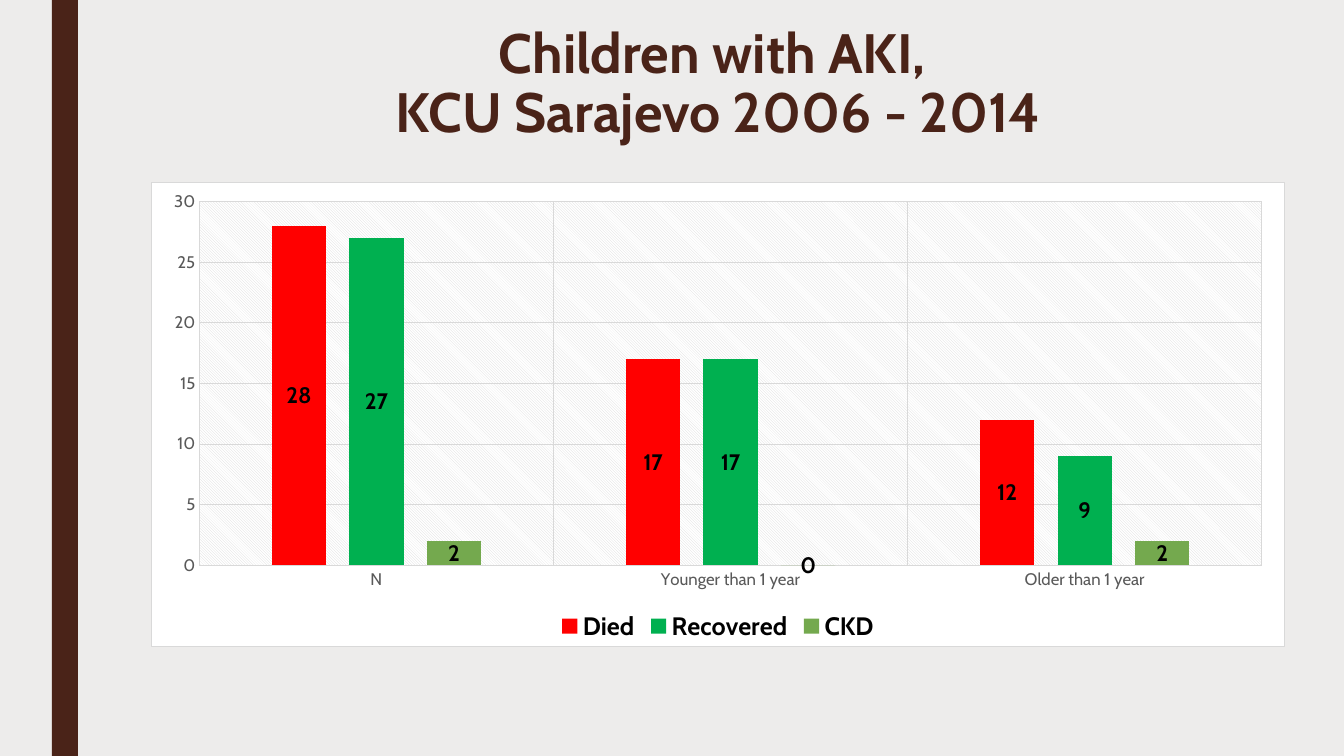
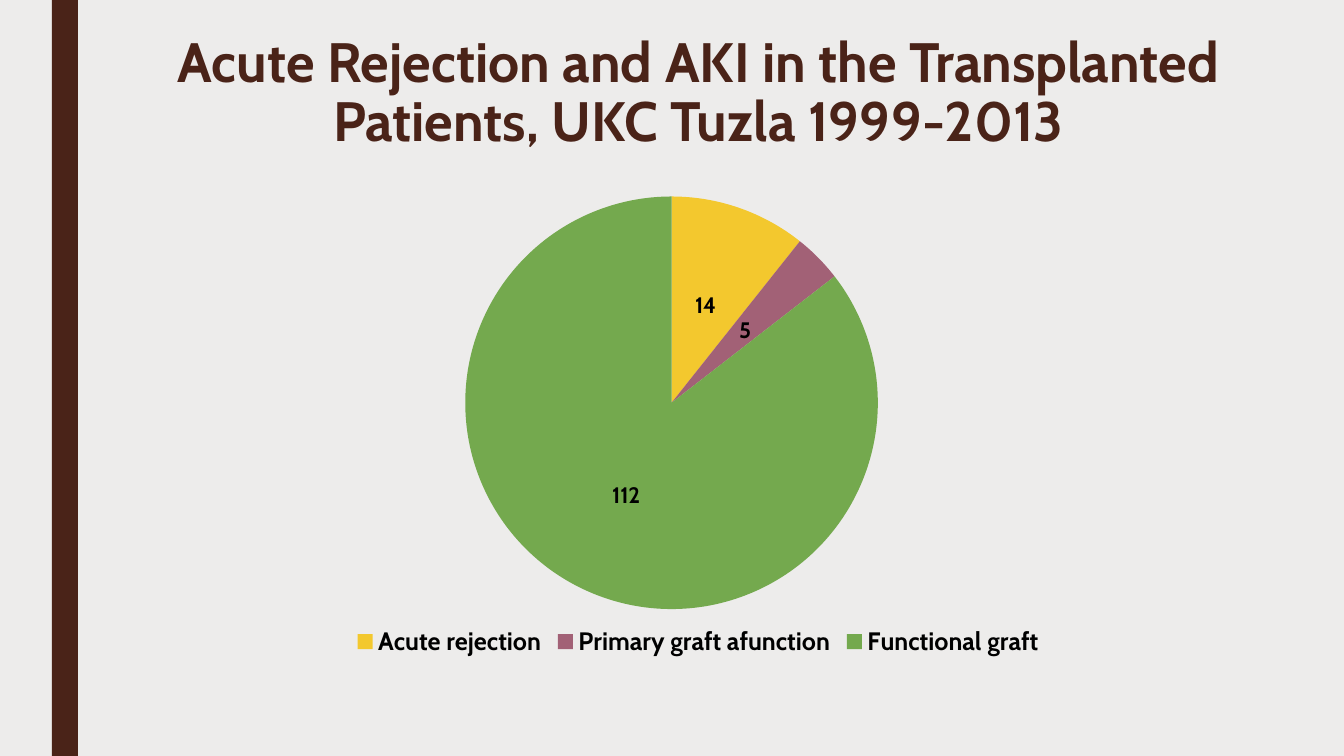
from lxml import etree
from pptx import Presentation
from pptx.chart.data import CategoryChartData
from pptx.dml.color import RGBColor
from pptx.enum.chart import (XL_CHART_TYPE as ChartType, XL_LABEL_POSITION as LabelPosition,
                             XL_LEGEND_POSITION as LegendPosition, XL_TICK_MARK as TickMark)
from pptx.enum.shapes import MSO_SHAPE as Preset
from pptx.enum.text import MSO_ANCHOR as Anchor, PP_ALIGN as Align
from pptx.oxml import parse_xml
from pptx.oxml.ns import nsdecls, qn
from pptx.util import Pt

# Shared style
PX = 914400 / 100.8
WIDTH, HEIGHT = 1344, 756
FONT = "Cabin"
BAND = (52, 0, 26, HEIGHT)
COLORS = {
    "background": "EDECEB", "brown": "4A2318", "black": "000000", "white": "FFFFFF",
    "grey_text": "595959", "grid": "D9D9D9", "red": "FF0000", "emerald": "00B050",
    "green": "74A94E", "yellow": "F3C82E", "plum": "A26176",
}

# Content
OUTCOMES = {
    "title": "Children with AKI, \vKCU Sarajevo 2006 - 2014",
    "title_box": (113, 21, 1211, 104),
    "chart_box": (151, 182, 1134, 465),
    "categories": ["N", "Younger than 1 year", "Older than 1 year"],
    "series": [
        ("Died", [28, 17, 12], "red"),
        ("Recovered", [27, 17, 9], "emerald"),
        ("CKD", [2, 0, 2], "green"),
    ],
}
GRAFTS = {
    "title": "Acute Rejection and AKI in the Transplanted Patients, UKC Tuzla 1999-2013",
    "title_box": (151, 30, 1095, 139),
    "chart_box": (169, 195, 1058, 467),
    "slices": [
        ("Acute rejection", 14, "yellow"),
        ("Primary graft afunction", 5, "plum"),
        ("Functional graft", 112, "green"),
    ],
    "plot_area": {"x": 0.28, "y": 0, "w": 0.39, "h": 0.89},
}


def color(name):
    return RGBColor.from_string(COLORS[name])


def emu(box):
    return [round(length * PX) for length in box]


def set_font(font, size, name, bold=False):
    font.name, font.size, font.bold = FONT, Pt(size), bold
    font.color.rgb = color(name)


def fill_solid(format_, name):
    format_.fill.solid()
    format_.fill.fore_color.rgb = color(name)


def set_line(line, name):
    line.color.rgb = color(name)
    line.width = Pt(0.75)


def add_base_slide(presentation, content):
    """Slide with background, side band and title."""
    slide = presentation.slides.add_slide(presentation.slide_layouts[6])
    fill_solid(slide.background, "background")

    band = slide.shapes.add_shape(Preset.RECTANGLE, *emu(BAND))
    band.shadow.inherit = False
    fill_solid(band, "brown")
    band.line.fill.background()

    frame = slide.shapes.add_textbox(*emu(content["title_box"])).text_frame
    frame.word_wrap = True
    frame.vertical_anchor = Anchor.TOP
    paragraph = frame.paragraphs[0]
    paragraph.text = content["title"]
    paragraph.alignment = Align.CENTER
    paragraph.line_spacing = 0.89
    set_font(paragraph.font, 39.6, "brown", bold=True)
    return slide


def add_chart(slide, content, chart_type, categories, series):
    """Chart with bottom legend and centred value labels."""
    data = CategoryChartData()
    data.categories = categories
    for name, values in series:
        data.add_series(name, values)
    chart = slide.shapes.add_chart(chart_type, *emu(content["chart_box"]), data).chart
    chart.has_title = False
    set_font(chart.font, 10, "black")
    chart.has_legend = True
    chart.legend.position = LegendPosition.BOTTOM
    chart.legend.include_in_layout = False
    set_font(chart.legend.font, 18, "black", bold=True)
    for chart_series in chart.plots[0].series:
        labels = chart_series.data_labels
        labels.show_value = True
        labels.position = LabelPosition.CENTER
        set_font(labels.font, 16, "black", bold=True)
    return chart


def shape_properties(fill):
    """Chart area properties: a fill and the thin grey border."""
    return parse_xml(f'<c:spPr {nsdecls("c", "a")}>{fill}</c:spPr>')


def solid_xml(name):
    return f'<a:solidFill><a:srgbClr val="{COLORS[name]}"/></a:solidFill>'


def style_column_areas(chart):
    chart_element = chart.element.find(qn("c:chart"))
    border = f'<a:ln w="9525">{solid_xml("grid")}</a:ln>'
    chart_element.addnext(shape_properties(solid_xml("white") + border))
    pattern = (f'<a:pattFill prst="ltDnDiag"><a:fgClr><a:srgbClr val="{COLORS["grid"]}"/></a:fgClr>'
               f'<a:bgClr><a:srgbClr val="{COLORS["white"]}"/></a:bgClr></a:pattFill>')
    chart_element.find(qn("c:plotArea")).append(shape_properties(pattern))


def place_plot(chart, fractions):
    """Fix the inner plot area as fractions of the chart."""
    plot_area = chart.element.find(qn("c:chart")).find(qn("c:plotArea"))
    for old_layout in plot_area.findall(qn("c:layout")):
        plot_area.remove(old_layout)
    layout = etree.Element(qn("c:layout"))
    manual = etree.SubElement(layout, qn("c:manualLayout"))
    settings = [("layoutTarget", "inner"), ("xMode", "edge"), ("yMode", "edge"), *fractions.items()]
    for tag, value in settings:
        etree.SubElement(manual, qn(f"c:{tag}")).set("val", str(value))
    plot_area.insert(0, layout)


def build_outcomes(presentation):
    slide = add_base_slide(presentation, OUTCOMES)
    series = [(name, values) for name, values, _ in OUTCOMES["series"]]
    chart = add_chart(slide, OUTCOMES, ChartType.COLUMN_CLUSTERED, OUTCOMES["categories"], series)
    plot = chart.plots[0]
    plot.gap_width, plot.overlap, plot.vary_by_categories = 267, -43, False
    for column, (_, _, fill) in zip(plot.series, OUTCOMES["series"]):
        fill_solid(column.format, fill)
        column.invert_if_negative = False

    # Axes
    for axis in (chart.category_axis, chart.value_axis):
        axis.major_tick_mark = axis.minor_tick_mark = TickMark.NONE
        axis.has_major_gridlines = True
        set_line(axis.major_gridlines.format.line, "grid")
        set_font(axis.tick_labels.font, 12, "grey_text")
    set_line(chart.category_axis.format.line, "grid")
    value_axis = chart.value_axis
    value_axis.format.line.fill.background()
    value_axis.minimum_scale, value_axis.maximum_scale, value_axis.major_unit = 0, 30, 5
    style_column_areas(chart)


def build_grafts(presentation):
    slide = add_base_slide(presentation, GRAFTS)
    names, values, fills = zip(*GRAFTS["slices"])
    chart = add_chart(slide, GRAFTS, ChartType.PIE, names, [("Series 1", values)])
    plot = chart.plots[0]
    plot.vary_by_categories = True
    for index, fill in enumerate(fills):
        point = plot.series[0].points[index]
        fill_solid(point.format, fill)
        point.format.line.fill.background()
    place_plot(chart, GRAFTS["plot_area"])


def main():
    presentation = Presentation()
    presentation.slide_width, presentation.slide_height = emu((WIDTH, HEIGHT))
    build_outcomes(presentation)
    build_grafts(presentation)
    presentation.save("out.pptx")


if __name__ == "__main__":
    main()
